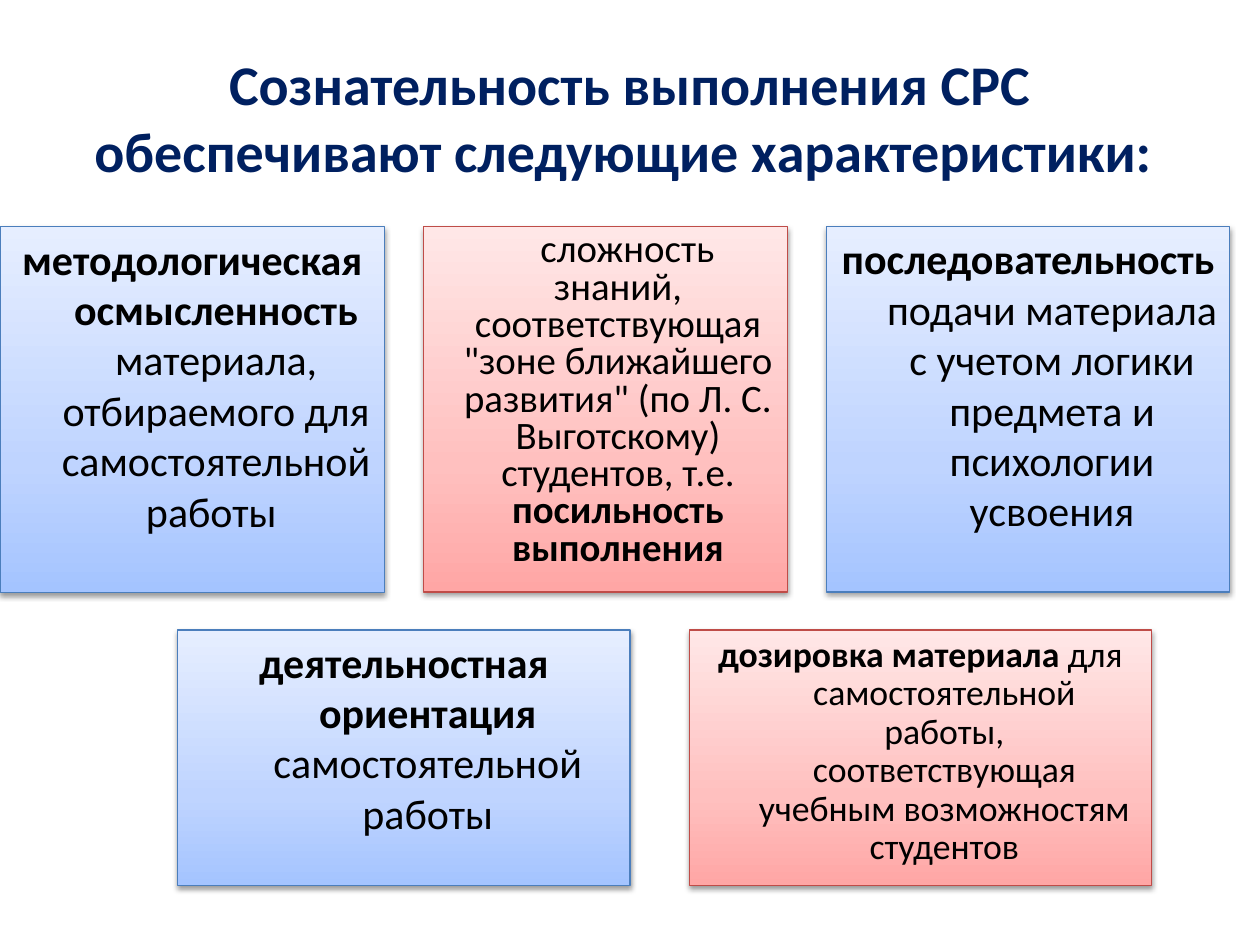
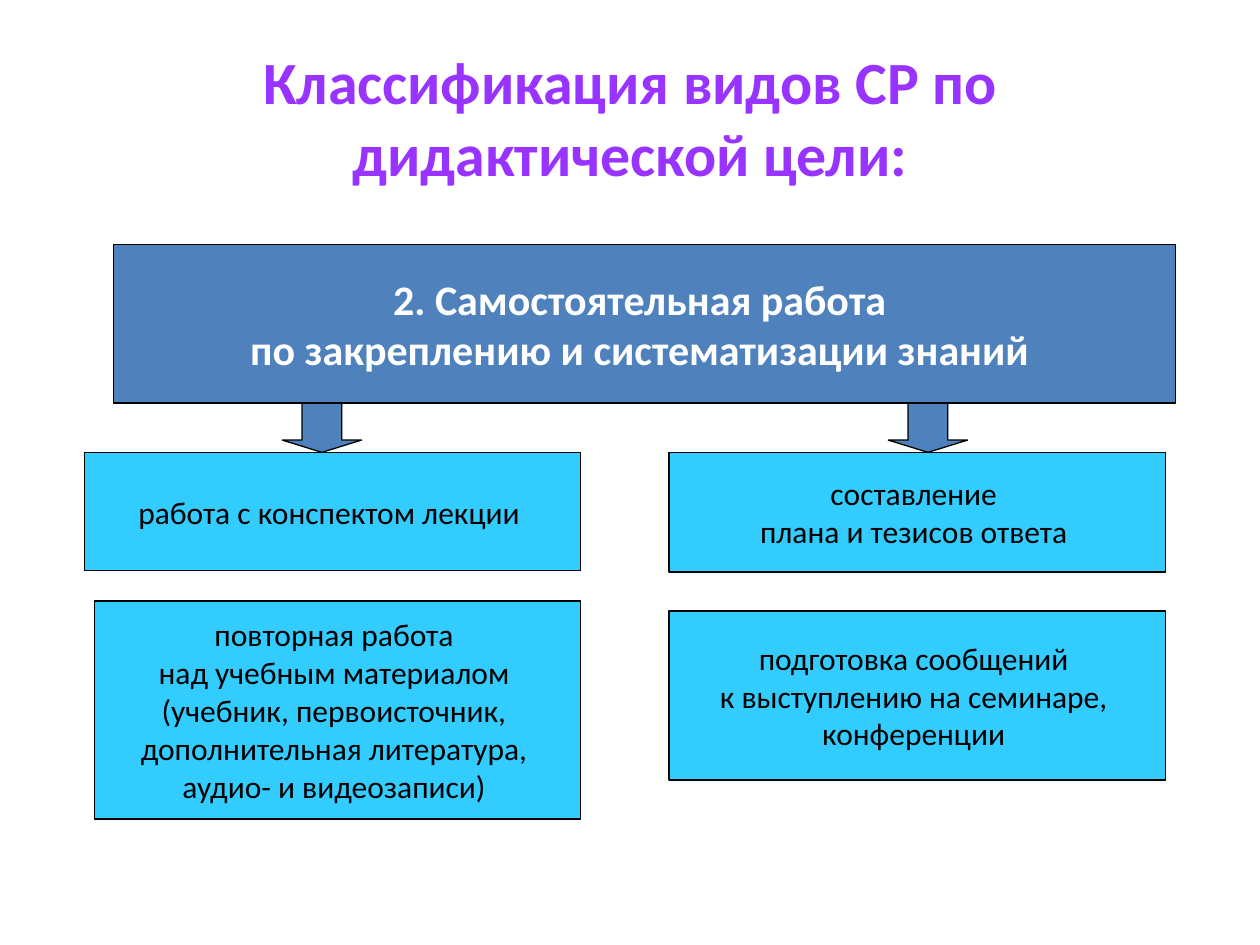
"""Builds two slides on students' independent work."""
from copy import deepcopy

from lxml.etree import SubElement
from pptx import Presentation
from pptx.dml.color import RGBColor
from pptx.enum.shapes import MSO_SHAPE
from pptx.enum.text import MSO_ANCHOR, MSO_AUTO_SIZE, PP_ALIGN
from pptx.oxml.ns import qn
from pptx.util import Pt

PX = 9144
FONT = "Calibri"
BLACK, WHITE, NAVY, VIOLET = "000000", "FFFFFF", "002060", "9933FF"
STEEL, SKY = "4F81BD", "33CCFF"
BLUE = {"stops": ((0, "A4C4FF"), (0.35, "BFD4FF"), (1, "E6EEFF")), "line": "4B7EBC"}
RED = {"stops": ((0, "FFA6A5"), (0.35, "FFC0BF"), (1, "FFE7E7")), "line": "BF4C48"}


def rgb(value):
    return RGBColor.from_string(value)


def apply(obj, fmt):
    for name, value in fmt.items():
        setattr(obj, name, value)


class Deck:
    def __init__(self):
        self.prs = Presentation()
        apply(self.prs, {"slide_width": 1000 * PX, "slide_height": 750 * PX})
        self.s = None

    def slide(self, layout, title, size, color):
        self.s = self.prs.slides.add_slide(self.prs.slide_layouts[layout])
        sp = self.s.shapes.title
        self.place(sp, (50, 30, 900, 125))
        self.frame(sp, MSO_ANCHOR.MIDDLE)
        self.fill_text(sp.text_frame.paragraphs[0], [(title, True)], size, color)

    def place(self, sp, box):
        apply(sp, dict(zip(("left", "top", "width", "height"), (v * PX for v in box))))

    def frame(self, sp, anchor, wrap=True):
        apply(sp.text_frame, {"word_wrap": wrap, "auto_size": MSO_AUTO_SIZE.NONE,
                              "vertical_anchor": anchor})

    def fill_text(self, p, runs, size, color):
        p.alignment = PP_ALIGN.CENTER
        for text, bold in runs:
            r = p.add_run()
            r.text = text
            apply(r.font, {"name": FONT, "size": Pt(size), "bold": bold})
            r.font.color.rgb = rgb(color)

    def shape(self, box, kind=MSO_SHAPE.RECTANGLE):
        return self.s.shapes.add_shape(kind, *(v * PX for v in box))

    def outline(self, sp, color):
        sp.line.color.rgb = rgb(color)
        sp.line.width = Pt(0.75)
        sp.shadow.inherit = False

    def gradient(self, sp, stops):
        sp.fill.gradient()
        sp.fill.gradient_angle = 90
        gs_list = sp._element.spPr.find(".//" + qn("a:gsLst"))
        gs_list.append(deepcopy(gs_list[-1]))
        for stop, (position, color) in zip(sp.fill.gradient_stops, stops):
            stop.position = position
            stop.color.rgb = rgb(color)

    def cast_shadow(self, sp):
        effects = sp._element.spPr.find(qn("a:effectLst"))
        shadow = SubElement(effects, qn("a:outerShdw"), blurRad="40000", dist="20000",
                            dir="5400000", rotWithShape="0")
        color = SubElement(shadow, qn("a:srgbClr"), val=BLACK)
        SubElement(color, qn("a:alpha"), val="38000")

    def card(self, box, theme, runs, size=24, spacing=1.0, margin=38, indent=-38, body=False):
        sp = self.s.placeholders[1] if body else self.shape(box)
        self.place(sp, box)
        self.gradient(sp, theme["stops"])
        self.outline(sp, theme["line"])
        self.cast_shadow(sp)
        self.frame(sp, MSO_ANCHOR.TOP)
        p = sp.text_frame.paragraphs[0]
        self.fill_text(p, runs, size, BLACK)
        apply(p, {"line_spacing": spacing, "space_before": Pt(size * 0.2)})
        pPr = p._p.get_or_add_pPr()
        pPr.set("marL", str(margin * PX))
        pPr.set("indent", str(indent * PX))
        SubElement(pPr, qn("a:buNone"))

    def block(self, box, lines, fill=SKY, size=18, color=BLACK, bold=False):
        sp = self.shape(box)
        self.solid(sp, fill)
        self.frame(sp, MSO_ANCHOR.MIDDLE, wrap=False)
        tf = sp.text_frame
        for i, line in enumerate(lines):
            p = tf.add_paragraph() if i else tf.paragraphs[0]
            self.fill_text(p, [(line, bold)], size, color)

    def solid(self, sp, fill):
        sp.fill.solid()
        sp.fill.fore_color.rgb = rgb(fill)
        self.outline(sp, BLACK)

    def arrow(self, box):
        sp = self.shape(box, MSO_SHAPE.DOWN_ARROW)
        sp.adjustments[1] = 0.25
        self.solid(sp, STEEL)


def characteristics(deck):
    deck.slide(1, "Сознательность выполнения СРС обеспечивают следующие характеристики: ", 32, NAVY)
    top_row = [
        (305, BLUE, [("методологическая осмысленность ", True),
                     ("материала, отбираемого для самостоятельной работы ", False)],
         {"body": True}),
        (289, RED, [("сложность знаний, соответствующая \"зоне ближайшего развития\" "
                     "(по Л. С. Выготскому) студентов, т.е. ", False),
                    ("посильность выполнения", True)],
         {"size": 22.2, "spacing": 0.8, "margin": 20, "indent": 15}),
        (320, BLUE, [("последовательность ", True),
                     ("подачи материала с учетом логики предмета и психологии усвоения", False)],
         {}),
    ]
    bottom_row = [
        (359, BLUE, [("деятельностная ориентация ", True),
                     ("самостоятельной работы", False)], {}),
        (367, RED, [("дозировка материала ", True),
                    ("для самостоятельной работы, соответствующая учебным "
                     "возможностям студентов", False)],
         {"size": 20.4, "spacing": 0.9}),
    ]
    for x, y, height, gap, row in ((0, 180, 290, 31, top_row), (141, 500, 203, 47, bottom_row)):
        for width, theme, runs, options in row:
            deck.card((x, y, width, height), theme, runs, **options)
            x += width + gap


def classification(deck):
    deck.slide(5, "Классификация видов СР по дидактической цели:", 34.2, VIOLET)
    deck.block((90, 194, 843, 126),
               ["2. Самостоятельная работа ", "по закреплению и систематизации знаний "],
               STEEL, 24, WHITE, True)
    tasks = [
        ((67, 359, 394, 94), ["работа с конспектом лекции "]),
        ((531, 359, 394, 95), ["составление ", "плана и тезисов ответа "]),
        ((75, 477, 386, 173), ["повторная работа ", "над учебным материалом ",
                               "(учебник, первоисточник, ", "дополнительная литература, ",
                               "аудио- и видеозаписи) "]),
        ((531, 485, 394, 134), ["подготовка сообщений ", "к выступлению на семинаре, ",
                                "конференции "]),
    ]
    for box, lines in tasks:
        deck.block(box, lines)
    for x in (224, 705):
        deck.arrow((x, 320, 63, 39))


def main():
    deck = Deck()
    characteristics(deck)
    classification(deck)
    deck.prs.save("out.pptx")


if __name__ == "__main__":
    main()
